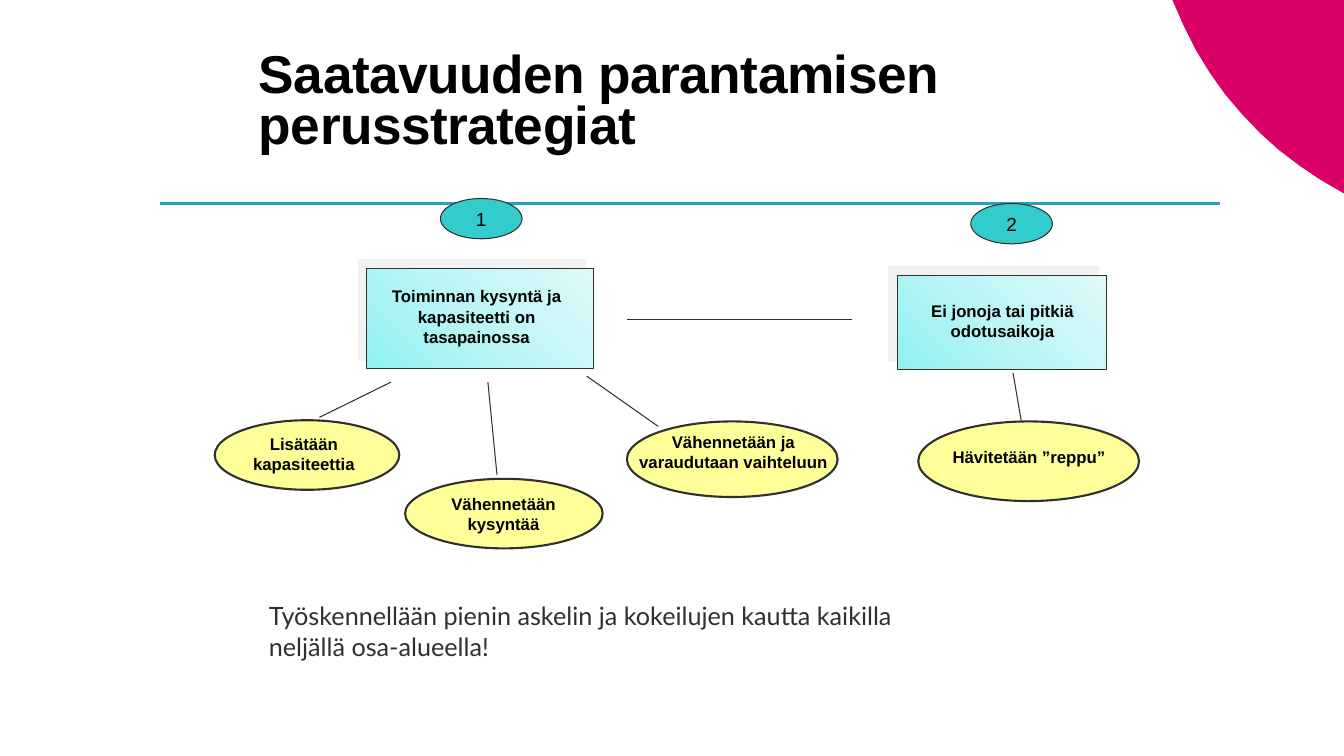
"""Build a slide on the basic strategies for improving access to care."""
from copy import deepcopy
from dataclasses import dataclass

from lxml.etree import SubElement
from pptx import Presentation
from pptx.dml.color import RGBColor
from pptx.enum.shapes import MSO_CONNECTOR, MSO_SHAPE
from pptx.enum.text import MSO_ANCHOR, PP_ALIGN
from pptx.oxml.ns import qn
from pptx.util import Pt


@dataclass(frozen=True)
class Theme:
    pink: str = "D90066"
    rule: str = "28A0C1"
    ink: str = "303030"
    black: str = "000000"
    teal: str = "33CCCC"
    yellow: str = "FFFF99"
    shade: str = "F2F2F2"
    fade: tuple = ("91F1F1", "BDF5F5", "DFF9F9")
    sans: str = "Arial"
    body: str = "Lato"
    title: float = 38
    note: float = 18
    badge: float = 13.5
    label: float = 12


THEME = Theme()
WIDTH, HEIGHT = 960, 540
TITLE = ("Saatavuuden parantamisen perusstrategiat", (185, 31.7, 635, 84.2))
NOTE = (
    "Työskennellään pienin askelin ja kokeilujen kautta kaikilla neljällä osa-alueella!",
    (185, 425.5, 486.7, 51.1),
)
CORNER = [
    (837.4, 0), (845.3, 18), (853.9, 35.3), (864, 51.8), (874.8, 67),
    (887, 81.4), (900, 95), (913.7, 107.3), (928.8, 118.8), (943.9, 128.9),
    (WIDTH, 138.2), (WIDTH, 0),
]
RULE = (114.5, 145.4, 871.2, 145.4)
LINKS = [
    (348.5, 272.9, 355, 339.1),
    (279.4, 272.9, 228.2, 298.1),
    (419, 268.6, 470.2, 304.6),
    (447.8, 228.2, 608.4, 228.2),
    (723.6, 266.4, 729.4, 300.2),
]
BADGES = [("1", (314.6, 141.8, 58.3, 28.8)), ("2", (693.4, 145.4, 58.3, 28.8))]
CARDS = [
    ("Toiminnan kysyntä ja kapasiteetti on tasapainossa",
     (262.1, 191.5, 162, 72), (271.4, 200.9, 138.2, 51.1)),
    ("Ei jonoja tai pitkiä odotusaikoja",
     (640.8, 196.6, 149.8, 67.7), (650.2, 211, 131.8, 36)),
]
OVALS = [
    ("Lisätään kapasiteettia",
     (153.4, 300.2, 131.8, 49.7), (160.6, 306, 113, 36)),
    ("Vähennetään kysyntää",
     (289.4, 342, 141.1, 49.7), (301, 349.2, 117.4, 36)),
    ("Vähennetään ja varaudutaan vaihteluun",
     (447.8, 301, 150.5, 54), (448.6, 304.6, 150.5, 36)),
    ("Hävitetään ”reppu”",
     (655.9, 301, 157.7, 56.9), (663.1, 315.4, 144, 21.6)),
]

deck = Presentation()
deck.slide_width, deck.slide_height = Pt(WIDTH), Pt(HEIGHT)
slide = deck.slides.add_slide(deck.slide_layouts[6])
shapes = slide.shapes


def tint(code):
    return RGBColor.from_string(code)


def write(frame, text, size=THEME.label, font=THEME.sans, color=THEME.black,
          bold=False, align=PP_ALIGN.LEFT, anchor=MSO_ANCHOR.TOP, wrap=True,
          space=None, track=None, left=7.2):
    frame.word_wrap = wrap
    frame.vertical_anchor = anchor
    frame.margin_left = Pt(left)
    line = frame.paragraphs[0]
    line.alignment = align
    line.line_spacing = space
    run = line.add_run()
    run.text = text
    run.font.size, run.font.name, run.font.bold = Pt(size), font, bold
    run.font.color.rgb = tint(color)
    if track is not None:
        run._r.get_or_add_rPr().set("spc", str(track))


def label(text, box, **style):
    write(shapes.add_textbox(*map(Pt, box)).text_frame, text, **style)


def draw(kind, box, weight):
    item = shapes.add_shape(kind, *map(Pt, box))
    item.shadow.inherit = False
    item.line.color.rgb = tint(THEME.ink)
    item.line.width = Pt(weight)
    return item


def oval(box, color, weight):
    item = draw(MSO_SHAPE.OVAL, box, weight)
    item.fill.solid()
    item.fill.fore_color.rgb = tint(color)
    return item


def card(box):
    item = draw(MSO_SHAPE.RECTANGLE, box, 0.75)
    item.fill.gradient()
    item.fill.gradient_angle = 45
    props = item._element.spPr
    stops = props.find(".//" + qn("a:gsLst"))
    stops.insert(1, deepcopy(stops[0]))
    for place, (stop, code) in enumerate(zip(item.fill.gradient_stops, THEME.fade)):
        stop.position = place / 2
        stop.color.rgb = tint(code)
    shadow = SubElement(props.find(qn("a:effectLst")), qn("a:outerShdw"),
                        blurRad="0", dist=str(Pt(8.5)), dir=str(225 * 60000),
                        algn="ctr", rotWithShape="0")
    SubElement(shadow, qn("a:srgbClr"), val=THEME.shade)


def link(ends, color=THEME.ink, weight=0.75):
    line = shapes.add_connector(MSO_CONNECTOR.STRAIGHT, *map(Pt, ends))
    line.line.color.rgb = tint(color)
    line.line.width = Pt(weight)
    SubElement(line._element.spPr, qn("a:effectLst"))


def main():
    start, *rest = [(Pt(x), Pt(y)) for x, y in CORNER]
    path = shapes.build_freeform(*start)
    path.add_line_segments(rest)
    corner = path.convert_to_shape()
    corner.shadow.inherit = False
    corner.fill.solid()
    corner.fill.fore_color.rgb = tint(THEME.pink)
    corner.line.fill.background()

    link(RULE, THEME.rule, 2.5)
    for ends in LINKS:
        link(ends)
    for text, box, inner in CARDS:
        card(box)
        label(text, inner, bold=True, align=PP_ALIGN.CENTER)
    for text, box in BADGES:
        write(oval(box, THEME.teal, 0.75).text_frame, text, size=THEME.badge,
              align=PP_ALIGN.CENTER, anchor=MSO_ANCHOR.MIDDLE, wrap=False)
    for text, box, inner in OVALS:
        oval(box, THEME.yellow, 1.5)
        label(text, inner, bold=True, align=PP_ALIGN.CENTER)
    label(*NOTE, size=THEME.note, font=THEME.body, color=THEME.ink)
    label(*TITLE, size=THEME.title, bold=True, anchor=MSO_ANCHOR.MIDDLE,
          space=0.8, track=-40, left=0)
    deck.save("out.pptx")


if __name__ == "__main__":
    main()
